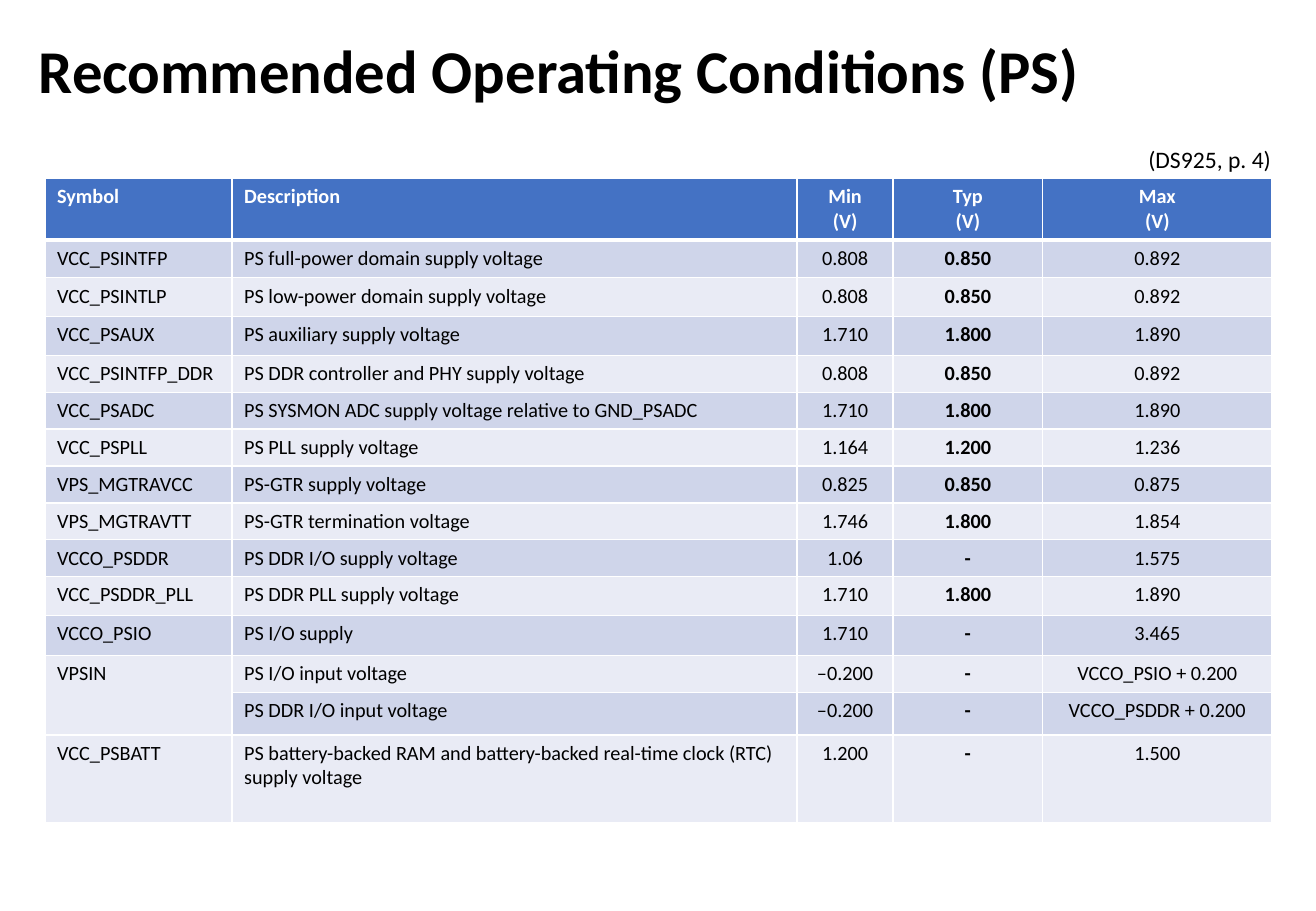
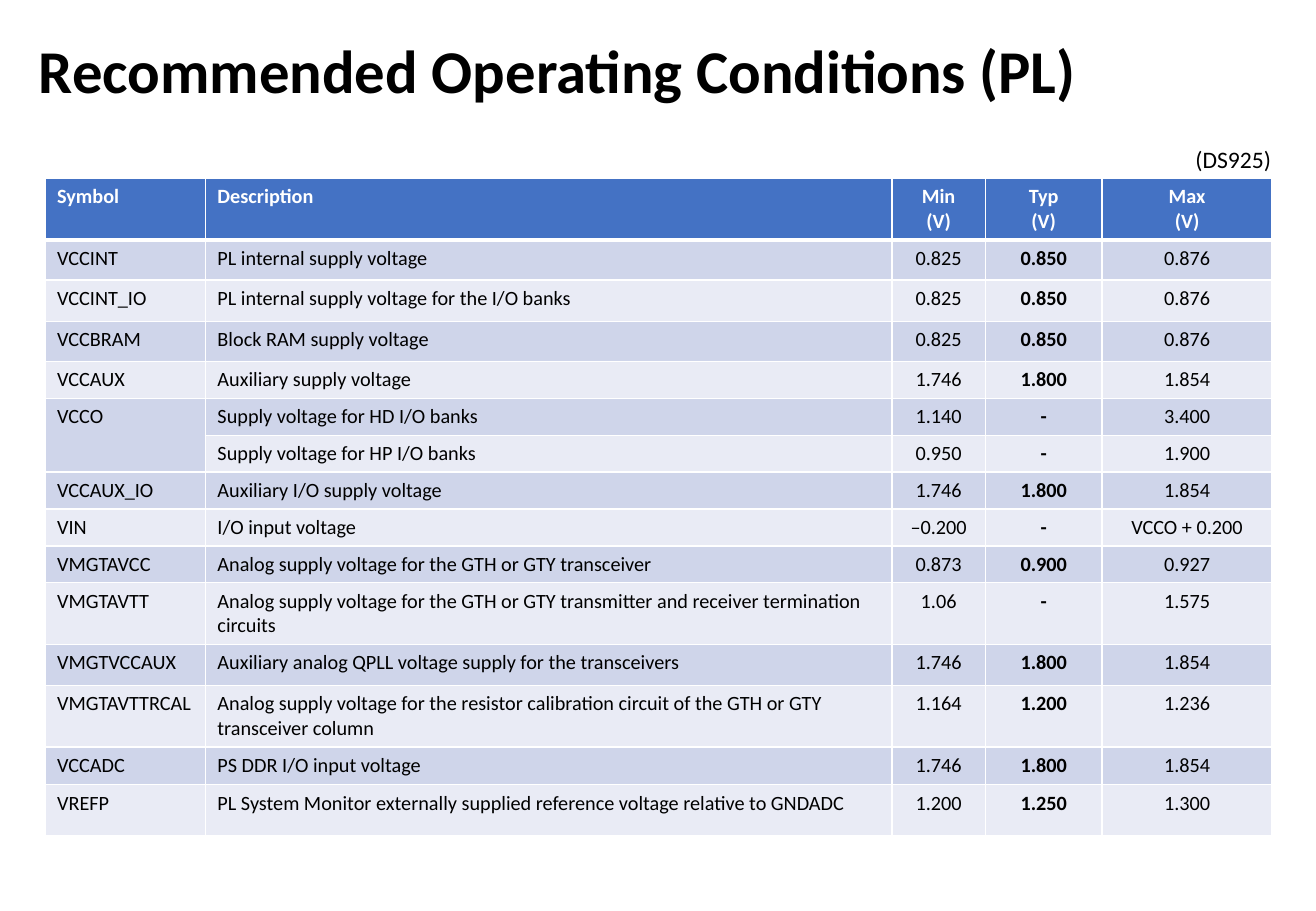
from lxml.etree import SubElement
from pptx import Presentation
from pptx.dml.color import RGBColor
from pptx.enum.text import MSO_ANCHOR, MSO_AUTO_SIZE, PP_ALIGN
from pptx.oxml.ns import qn
from pptx.util import Inches, Pt

FONT = "Calibri"
COLORS = {"text": "000000", "white": "FFFFFF", "header": "4472C4",
          "band_dark": "CFD5EA", "band_light": "E9EBF5"}
HEADERS = ("Symbol", "Description", "Min\n(V)", "Typ\n(V)", "Max\n(V)")
TYPICAL_COLUMN = 3
FIRST_NUMBER_COLUMN = 2
TABLE_LEFT, TABLE_TOP = 0.37, 1.47

# Content: an empty symbol continues the symbol of the row above.
# Each row ends with its height in inches.
SLIDES = [
    {
        "title": "Recommended Operating Conditions (PS)",
        "source": "(DS925, p. 4)",
        "columns": (1.54, 4.65, 0.79, 1.23, 1.89),
        "rows": [
            ("VCC_PSINTFP", "PS full-power domain supply voltage", "0.808", "0.850", "0.892", 0.31),
            ("VCC_PSINTLP", "PS low-power domain supply voltage", "0.808", "0.850", "0.892", 0.32),
            ("VCC_PSAUX", "PS auxiliary supply voltage", "1.710", "1.800", "1.890", 0.32),
            ("VCC_PSINTFP_DDR", "PS DDR controller and PHY supply voltage",
             "0.808", "0.850", "0.892", 0.3),
            ("VCC_PSADC", "PS SYSMON ADC supply voltage relative to GND_PSADC",
             "1.710", "1.800", "1.890", 0.3),
            ("VCC_PSPLL", "PS PLL supply voltage", "1.164", "1.200", "1.236", 0.3),
            ("VPS_MGTRAVCC", "PS-GTR supply voltage", "0.825", "0.850", "0.875", 0.3),
            ("VPS_MGTRAVTT", "PS-GTR termination voltage", "1.746", "1.800", "1.854", 0.3),
            ("VCCO_PSDDR", "PS DDR I/O supply voltage", "1.06", "-", "1.575", 0.3),
            ("VCC_PSDDR_PLL", "PS DDR PLL supply voltage", "1.710", "1.800", "1.890", 0.32),
            ("VCCO_PSIO", "PS I/O supply", "1.710", "-", "3.465", 0.33),
            ("VPSIN", "PS I/O input voltage", "–0.200", "-", "VCCO_PSIO + 0.200", 0.3),
            ("", "PS DDR I/O input voltage", "–0.200", "-", "VCCO_PSDDR + 0.200", 0.35),
            ("VCC_PSBATT",
             "PS battery-backed RAM and battery-backed real-time clock (RTC) supply voltage",
             "1.200", "-", "1.500", 0.72),
        ],
    },
    {
        "title": "Recommended Operating Conditions (PL)",
        "source": "(DS925)",
        "columns": (1.32, 5.65, 0.77, 0.96, 1.4),
        "rows": [
            ("VCCINT", "PL internal supply voltage", "0.825", "0.850", "0.876", 0.33),
            ("VCCINT_IO", "PL internal supply voltage for the I/O banks",
             "0.825", "0.850", "0.876", 0.34),
            ("VCCBRAM", "Block RAM supply voltage", "0.825", "0.850", "0.876", 0.33),
            ("VCCAUX", "Auxiliary supply voltage", "1.746", "1.800", "1.854", 0.3),
            ("VCCO", "Supply voltage for HD I/O banks", "1.140", "-", "3.400", 0.3),
            ("", "Supply voltage for HP I/O banks", "0.950", "-", "1.900", 0.3),
            ("VCCAUX_IO", "Auxiliary I/O supply voltage", "1.746", "1.800", "1.854", 0.3),
            ("VIN", "I/O input voltage", "–0.200", "-", "VCCO + 0.200", 0.3),
            ("VMGTAVCC", "Analog supply voltage for the GTH or GTY transceiver",
             "0.873", "0.900", "0.927", 0.3),
            ("VMGTAVTT",
             "Analog supply voltage for the GTH or GTY transmitter and receiver termination circuits",
             "1.06", "-", "1.575", 0.5),
            ("VMGTVCCAUX", "Auxiliary analog QPLL voltage supply for the transceivers",
             "1.746", "1.800", "1.854", 0.34),
            ("VMGTAVTTRCAL", "Analog supply voltage for the resistor calibration circuit "
             "of the GTH or GTY transceiver column", "1.164", "1.200", "1.236", 0.5),
            ("VCCADC", "PS DDR I/O input voltage", "1.746", "1.800", "1.854", 0.31),
            ("VREFP", "PL System Monitor externally supplied reference voltage relative to GNDADC",
             "1.200", "1.250", "1.300", 0.42),
        ],
    },
]
HEADER_HEIGHT = 0.49


def set_text(text_frame, text, size, color="text", bold=False, align=PP_ALIGN.LEFT):
    text_frame.text = text
    for paragraph in text_frame.paragraphs:
        paragraph.alignment = align
        for run in paragraph.runs:
            run.font.name = FONT
            run.font.size = Pt(size)
            run.font.bold = bold
            run.font.color.rgb = RGBColor.from_string(COLORS[color])


def set_borders(cell, top, bottom):
    """Draw white cell borders; call before the fill, which must follow them."""
    properties = cell._tc.get_or_add_tcPr()
    for side, width in (("L", 1), ("R", 1), ("T", top), ("B", bottom)):
        line = SubElement(properties, qn(f"a:ln{side}"), w=str(Pt(width)))
        SubElement(SubElement(line, qn("a:solidFill")), qn("a:srgbClr"), val=COLORS["white"])


def add_title(slide, text):
    title = slide.shapes.title
    title.left, title.top = Inches(0.22), Inches(0.13)
    title.width, title.height = Inches(9.34), Inches(0.96)
    set_text(title.text_frame, text, 36, bold=True)
    title.text_frame.auto_size = MSO_AUTO_SIZE.NONE
    title.text_frame.vertical_anchor = MSO_ANCHOR.MIDDLE
    title.text_frame.paragraphs[0].line_spacing = 0.9


def add_source(slide, text):
    box = slide.shapes.add_textbox(Inches(9.06), Inches(1.14), Inches(1.5), Inches(0.34))
    box.text_frame.word_wrap = True
    set_text(box.text_frame, text, 14, align=PP_ALIGN.RIGHT)


def add_conditions_table(slide, columns, rows):
    lines = [(*HEADERS, HEADER_HEIGHT), *rows]
    heights = [line[-1] for line in lines]
    table = slide.shapes.add_table(
        len(lines), len(columns), Inches(TABLE_LEFT), Inches(TABLE_TOP),
        Inches(sum(columns)), Inches(sum(heights))).table
    for column, width in zip(table.columns, columns):
        column.width = Inches(width)

    for row_index, (*texts, height) in enumerate(lines):
        table.rows[row_index].height = Inches(height)
        is_header = row_index == 0
        fill = "header" if is_header else "band_dark" if row_index % 2 else "band_light"
        for column_index, text in enumerate(texts):
            cell = table.cell(row_index, column_index)
            set_borders(cell, top=3 if row_index == 1 else 1, bottom=3 if is_header else 1)
            cell.fill.solid()
            cell.fill.fore_color.rgb = RGBColor.from_string(COLORS[fill])
            set_text(cell.text_frame, text, 12,
                     color="white" if is_header else "text",
                     bold=is_header or column_index == TYPICAL_COLUMN,
                     align=PP_ALIGN.CENTER if column_index >= FIRST_NUMBER_COLUMN
                     else PP_ALIGN.LEFT)
        if not texts[0]:
            table.cell(row_index - 1, 0).merge(table.cell(row_index, 0))


def main():
    presentation = Presentation()
    presentation.slide_width, presentation.slide_height = Inches(10.83), Inches(7.5)
    title_only = presentation.slide_layouts[5]
    for content in SLIDES:
        slide = presentation.slides.add_slide(title_only)
        add_title(slide, content["title"])
        add_conditions_table(slide, content["columns"], content["rows"])
        add_source(slide, content["source"])
    presentation.save("out.pptx")


if __name__ == "__main__":
    main()
